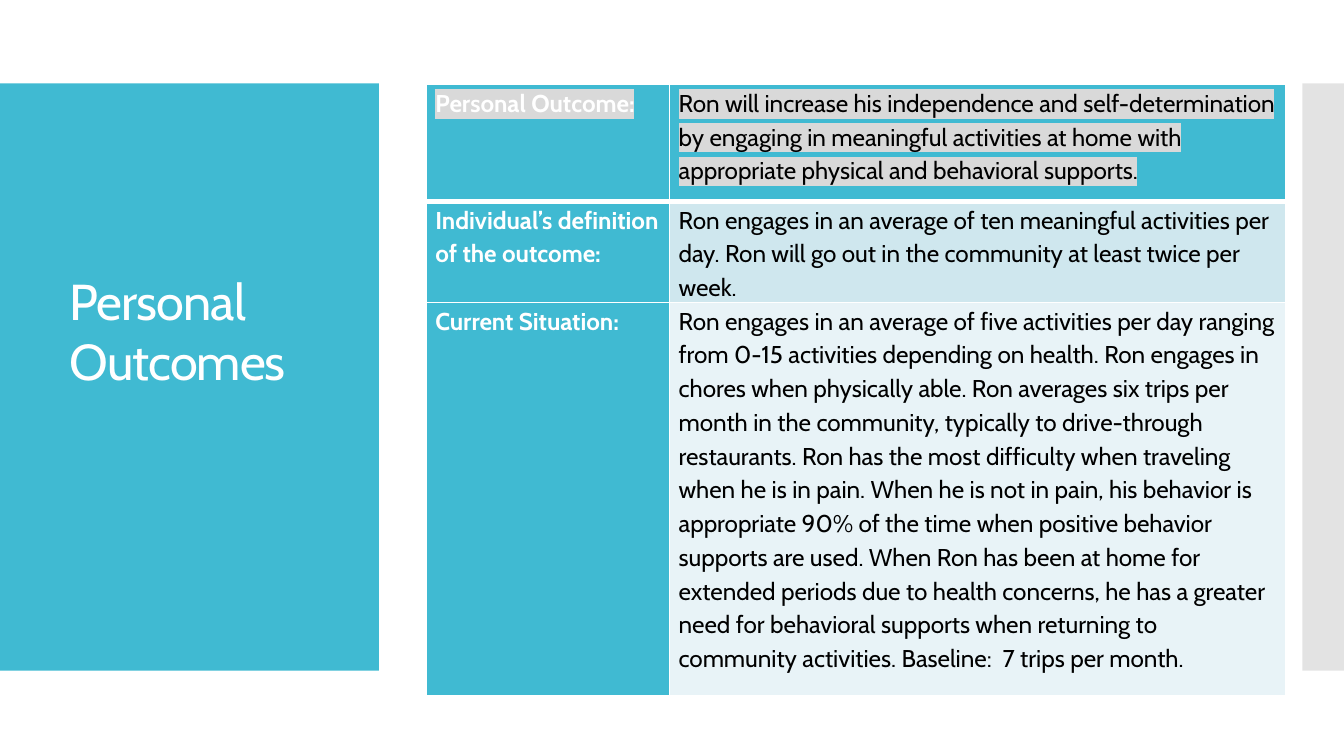
from lxml.etree import SubElement
from pptx import Presentation
from pptx.dml.color import RGBColor
from pptx.enum.shapes import MSO_SHAPE
from pptx.enum.text import MSO_ANCHOR
from pptx.oxml import parse_xml
from pptx.oxml.ns import nsdecls, qn
from pptx.util import Inches, Pt


class Theme:
    font = "Cabin"
    teal = "40BAD2"
    gray = "C8C8C8"
    mark = "D9D9D9"
    pale = "CFE7EE"
    mist = "E8F3F7"
    white = "FFFFFF"
    black = "000000"
    head = 27
    body = 13


def style(run, size, color, bold=False):
    font = run.font
    font.name = Theme.font
    font.size = Pt(size)
    font.bold = bold
    font.color.rgb = RGBColor.from_string(color)


def border(cell, base):
    props = cell._tc.get_or_add_tcPr()
    for spot, (side, width) in enumerate(zip("LRTB", (1, 1, 1, base))):
        props.insert(spot, parse_xml(
            f'<a:ln{side} {nsdecls("a")} w="{Pt(width)}"><a:solidFill>'
            f'<a:srgbClr val="{Theme.white}"/></a:solidFill></a:ln{side}>'))


deck = Presentation()
deck.slide_width = Inches(10)
deck.slide_height = Inches(10) * 9 // 16
slide = deck.slides.add_slide(deck.slide_layouts[6])

for left, width, color in ((0, 2.82, Theme.teal), (9.69, 0.31, Theme.gray)):
    panel = slide.shapes.add_shape(
        MSO_SHAPE.RECTANGLE, Inches(left), Inches(0.62), Inches(width), Inches(4.37))
    panel.shadow.inherit = False
    panel.fill.solid()
    panel.fill.fore_color.rgb = RGBColor.from_string(color)
    panel.line.fill.background()
tint = panel._element.spPr.find(qn("a:solidFill"))[0]
SubElement(tint, qn("a:alpha")).set("val", "50000")

title = slide.shapes.add_textbox(Inches(0.42), Inches(0.5), Inches(1.89), Inches(2.51))
frame = title.text_frame
frame.word_wrap = True
frame.vertical_anchor = MSO_ANCHOR.BOTTOM
frame.margin_left = frame.margin_right = Inches(0.1)
frame.margin_top = frame.margin_bottom = Inches(0.1)
frame.text = "Personal Outcomes"
run = frame.paragraphs[0].runs[0]
style(run, Theme.head, Theme.white)
run._r.get_or_add_rPr().set("spc", "-50")

rows = (
    (0.87, Theme.teal, "Personal Outcome:",
     "Ron will increase his independence and self-determination by engaging in "
     "meaningful activities at home with appropriate physical and behavioral supports."),
    (0.75, Theme.pale, "Individual’s definition of the outcome:",
     "Ron engages in an average of ten meaningful activities per day. "
     "Ron will go out in the community at least twice per week."),
    (2.93, Theme.mist, "Current Situation:",
     "Ron engages in an average of five activities per day ranging from 0-15 "
     "activities depending on health. Ron engages in chores when physically able. "
     "Ron averages six trips per month in the community, typically to drive-through "
     "restaurants. Ron has the most difficulty when traveling when he is in pain. "
     "When he is not in pain, his behavior is appropriate 90% of the time when "
     "positive behavior supports are used. When Ron has been at home for extended "
     "periods due to health concerns, he has a greater need for behavioral supports "
     "when returning to community activities. Baseline:  7 trips per month."),
)
table = slide.shapes.add_table(
    len(rows), 2, Inches(3.17), Inches(0.63), Inches(6.4), Inches(4.55)).table
for column, width in zip(table.columns, (1.81, 4.59)):
    column.width = Inches(width)

for y, (height, shade, label, detail) in enumerate(rows):
    table.rows[y].height = Inches(height)
    pair = ((label, Theme.teal, Theme.white), (detail, shade, Theme.black))
    for x, (words, fill, ink) in enumerate(pair):
        cell = table.cell(y, x)
        cell.margin_left = cell.margin_right = Inches(0.07)
        cell.margin_top = cell.margin_bottom = 0
        cell.fill.solid()
        cell.fill.fore_color.rgb = RGBColor.from_string(fill)
        border(cell, 3 if y == 0 else 1)
        cell.text_frame.text = words
        para = cell.text_frame.paragraphs[0]
        para.line_spacing = 1.15
        run = para.runs[0]
        style(run, Theme.body, ink, x == 0)
        if y == 0:
            run._r.rPr.find(qn("a:solidFill")).addnext(parse_xml(
                f'<a:highlight {nsdecls("a")}><a:srgbClr val="{Theme.mark}"/></a:highlight>'))

deck.save("out.pptx")
